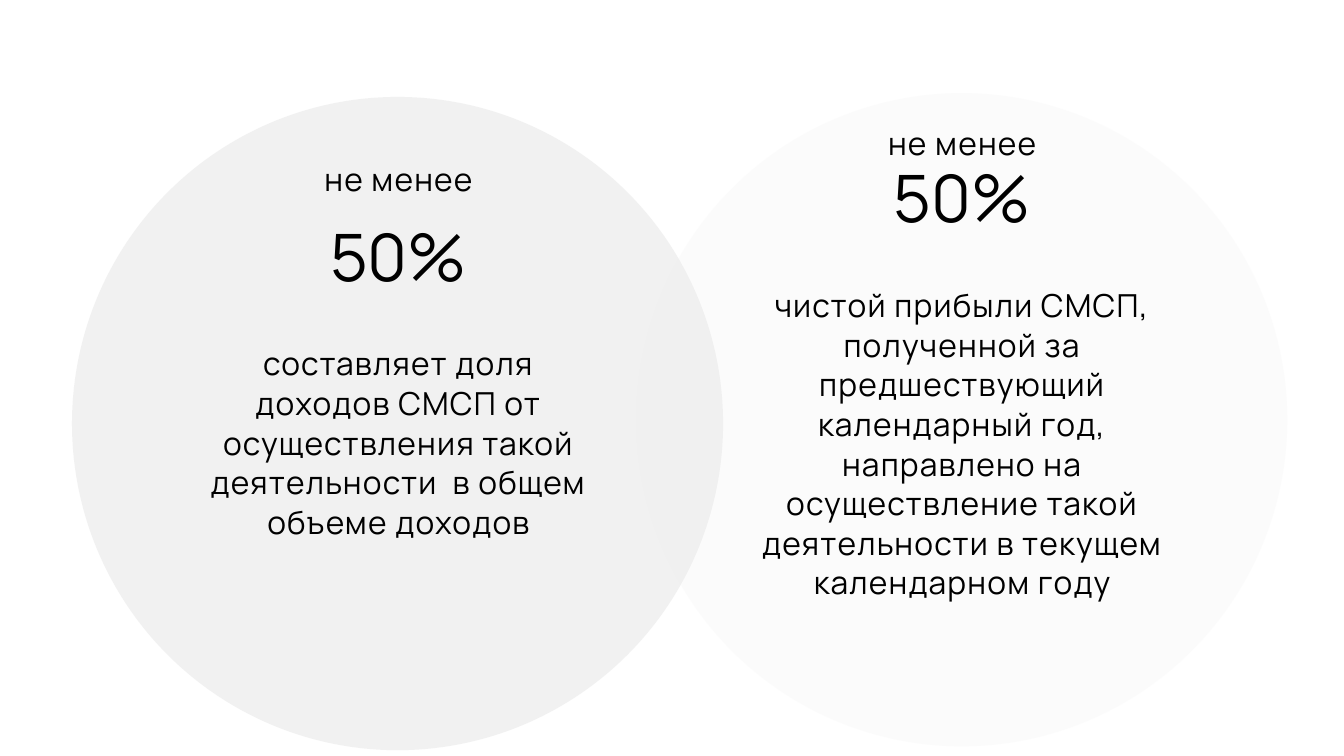
from lxml import etree
from pptx import Presentation
from pptx.dml.color import RGBColor
from pptx.enum.shapes import MSO_SHAPE
from pptx.enum.text import MSO_AUTO_SIZE, PP_ALIGN
from pptx.oxml.ns import qn
from pptx.util import Cm, Pt

OVAL = MSO_SHAPE.OVAL
CENTER = PP_ALIGN.CENTER
GROW = MSO_AUTO_SIZE.SHAPE_TO_FIT_TEXT

COLORS = {"disc": "EFEFEF", "text": "000000"}
FRAME = {"margin_left": 0, "margin_top": 0, "margin_right": 0,
         "margin_bottom": 0, "word_wrap": True, "auto_size": GROW}
STYLES = {
    "big": {"size": 38.6, "line": 44.4, "track": 0},
    "body": {"size": 18.7, "line": 23.4, "track": 70},
}


def apply(target, values):
    for name, value in values.items():
        setattr(target, name, value)


class Deck:
    def __init__(self, width, height, font):
        self.prs = Presentation()
        apply(self.prs, {"slide_width": Cm(width), "slide_height": Cm(height)})
        self.slide = self.prs.slides.add_slide(self.prs.slide_layouts[6])
        self.font = font

    def disc(self, left, top, width, height, alpha):
        shape = self.slide.shapes.add_shape(
            OVAL, Cm(left), Cm(top), Cm(width), Cm(height))
        shape.shadow.inherit = False
        shape.line.fill.background()
        shape.fill.solid()
        shape.fill.fore_color.rgb = RGBColor.from_string(COLORS["disc"])
        color = shape.fill._xPr.find(".//" + qn("a:srgbClr"))
        etree.SubElement(color, qn("a:alpha")).set("val", str(alpha * 1000))

    def text(self, words, left, top, width, height, kind):
        style = STYLES[kind]
        box = self.slide.shapes.add_textbox(
            Cm(left), Cm(top), Cm(width), Cm(height))
        apply(box.text_frame, FRAME)
        para = box.text_frame.paragraphs[0]
        apply(para, {"alignment": CENTER, "line_spacing": Pt(style["line"])})
        run = para.add_run()
        run.text = words
        apply(run.font, {"name": self.font, "size": Pt(style["size"])})
        run.font.color.rgb = RGBColor.from_string(COLORS["text"])
        if style["track"]:
            run.font._element.set("spc", str(style["track"]))

    def save(self):
        self.prs.save("out.pptx")


DISCS = [(1.5, 2.02, 85), (13.25, 1.94, 20)]
TEXT_WIDTH = 8.38
GROUPS = [
    (4.11, 3.3, 4.57, 3.23,
     "составляет доля доходов СМСП от осуществления такой "
     "деятельности  в общем объеме доходов"),
    (15.85, 2.54, 3.35, 6.5,
     "чистой прибыли СМСП, полученной за предшествующий календарный год, "
     "направлено на осуществление такой деятельности в текущем "
     "календарном году"),
]


def main():
    deck = Deck(27.99, 15.75, "Manrope")
    for left, top, alpha in DISCS:
        deck.disc(left, top, 13.56, 13.61, alpha)
    for left, lead, share, height, words in GROUPS:
        deck.text("не менее", left, lead, TEXT_WIDTH, 0.76, "body")
        deck.text("50%", left, share, TEXT_WIDTH, 1.57, "big")
        deck.text(words, left, share + 2.57, TEXT_WIDTH, height, "body")
    deck.save()


if __name__ == "__main__":
    main()
